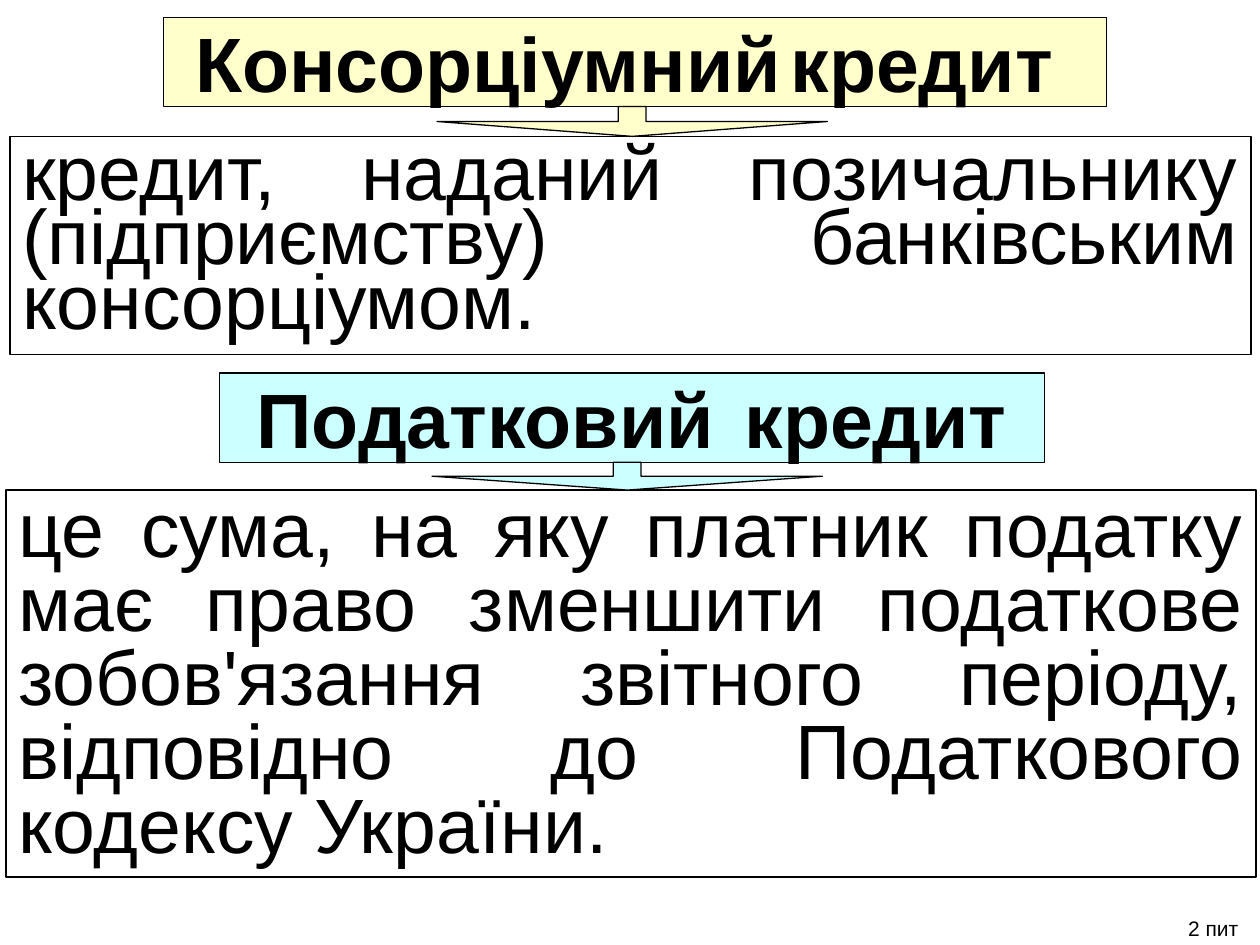
"""Build a slide that defines consortium credit and tax credit."""
from pptx import Presentation
from pptx.dml.color import RGBColor
from pptx.enum.shapes import MSO_SHAPE
from pptx.enum.text import MSO_ANCHOR, MSO_AUTO_SIZE, PP_ALIGN
from pptx.util import Cm, Pt

RECTANGLE, DOWN_ARROW = MSO_SHAPE.RECTANGLE, MSO_SHAPE.DOWN_ARROW
CENTER, JUSTIFY, LEFT = PP_ALIGN.CENTER, PP_ALIGN.JUSTIFY, PP_ALIGN.LEFT
MIDDLE = MSO_ANCHOR.MIDDLE
NO_FIT = MSO_AUTO_SIZE.NONE
FIT_SHAPE = MSO_AUTO_SIZE.SHAPE_TO_FIT_TEXT

BLACK = RGBColor(0x00, 0x00, 0x00)
WHITE = RGBColor(0xFF, 0xFF, 0xFF)
CREAM = RGBColor(0xFF, 0xFF, 0xCC)
AQUA = RGBColor(0xCC, 0xFF, 0xFF)


class CreditSlide:
    font, main_size, gap_size, note_size = "Arial", 44, 18, 12

    def __init__(self, slide):
        self.slide = slide

    def paint(self, shape, color):
        shape.shadow.inherit = False
        shape.fill.solid()
        shape.fill.fore_color.rgb = color
        shape.line.color.rgb = BLACK
        shape.line.width = Pt(0.75)

    def format_run(self, run, size, bold=False):
        run.font.name = self.font
        run.font.size = Pt(size)
        run.font.bold = bold
        run.font.color.rgb = BLACK

    def place(self, shape, box):
        shape.left, shape.top, shape.width, shape.height = map(Cm, box)

    def add(self, kind, box, color):
        shape = self.slide.shapes.add_shape(kind, *map(Cm, box))
        self.paint(shape, color)
        return shape

    def fill_heading(self, shape, first, second):
        frame = shape.text_frame
        frame.word_wrap = True
        frame.auto_size = NO_FIT
        frame.vertical_anchor = MIDDLE
        paragraph = frame.paragraphs[0]
        paragraph.alignment = CENTER
        for text, size in ((first, self.main_size), (" ", self.gap_size),
                           (second, self.main_size)):
            run = paragraph.add_run()
            run.text = text
            self.format_run(run, size, bold=size == self.main_size)

    def title(self, box, color, first, second):
        title = self.slide.shapes.title
        self.place(title, box)
        self.paint(title, color)
        self.fill_heading(title, first, second)

    def heading(self, box, color, first, second):
        self.fill_heading(self.add(RECTANGLE, box, color), first, second)

    def definition(self, box, text, spacing):
        frame = self.add(RECTANGLE, box, WHITE).text_frame
        frame.word_wrap = True
        frame.vertical_anchor = MIDDLE
        frame.text = text
        paragraph = frame.paragraphs[0]
        paragraph.alignment = JUSTIFY
        paragraph.line_spacing = spacing
        self.format_run(paragraph.runs[0], self.main_size)

    def arrow(self, box, color):
        arrow = self.add(DOWN_ARROW, box, color)
        arrow.adjustments[0] = 0.071
        arrow.adjustments[1] = 0.5

    def note(self, box, text):
        frame = self.slide.shapes.add_textbox(*map(Cm, box)).text_frame
        frame.word_wrap = True
        frame.auto_size = FIT_SHAPE
        frame.text = text
        frame.paragraphs[0].alignment = LEFT
        self.format_run(frame.paragraphs[0].runs[0], self.note_size)


def main():
    deck = Presentation()
    deck.slide_width, deck.slide_height = Cm(25.4), Cm(19.05)
    credit = CreditSlide(deck.slides.add_slide(deck.slide_layouts[5]))

    credit.title((3.3, 0.35, 19, 1.8), CREAM, "Консорціумний", "кредит ")
    credit.definition(
        (0.2, 2.75, 25.02, 4.4),
        "кредит, наданий позичальнику (підприємству) банківським "
        "консорціумом.", 0.7)
    credit.arrow((8.81, 2.15, 7.87, 0.6), CREAM)

    credit.heading((4.42, 7.52, 16.64, 1.8), AQUA, "Податковий ", "кредит")
    credit.definition(
        (0.12, 9.88, 25.2, 7.8),
        "це сума, на яку платник податку має право зменшити податкове "
        "зобов'язання звітного періоду, відповідно до Податкового "
        "кодексу України.", 0.8)
    credit.arrow((8.71, 9.32, 7.87, 0.56), AQUA)

    credit.note((23.7, 18.34, 1.7, 0.76), "2 пит")
    deck.save("out.pptx")


if __name__ == "__main__":
    main()
